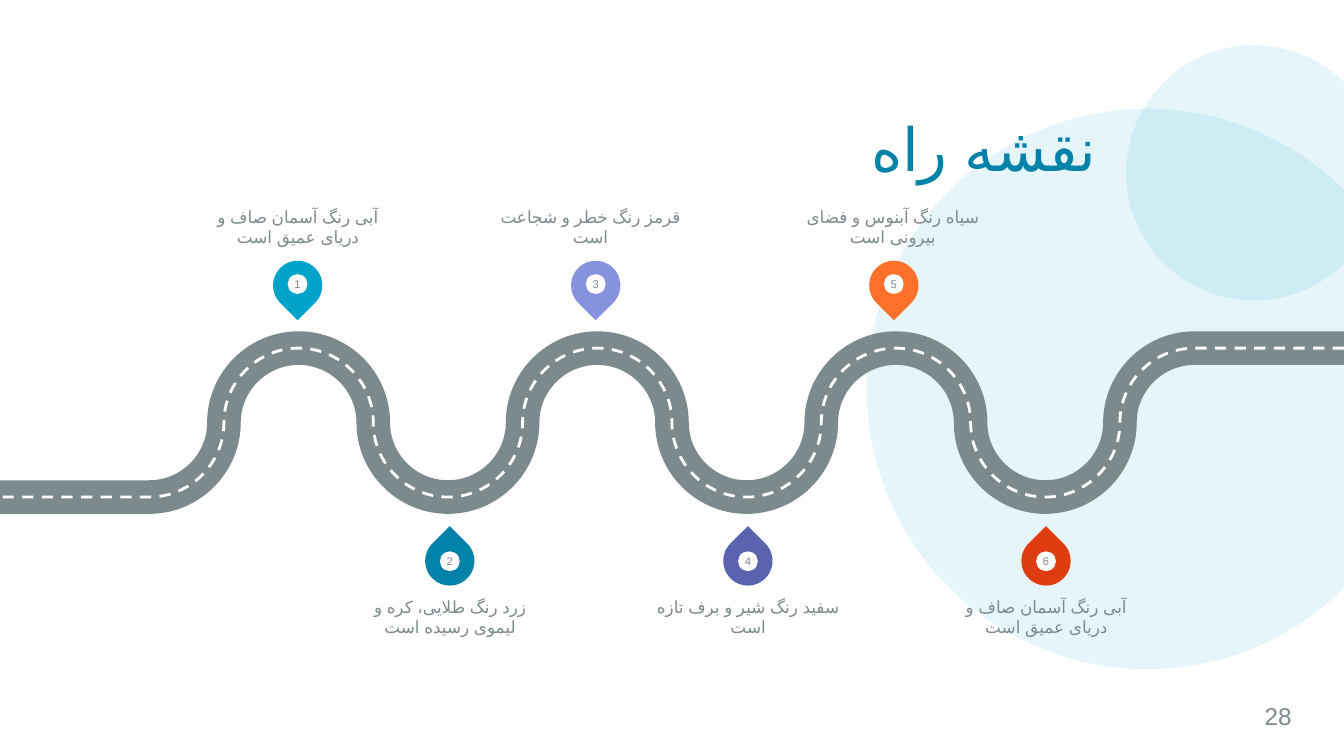
from pptx import Presentation
from pptx.dml.color import RGBColor
from pptx.enum.dml import MSO_LINE
from pptx.enum.shapes import MSO_SHAPE
from pptx.enum.text import MSO_ANCHOR, PP_ALIGN
from pptx.oxml.ns import qn
from pptx.util import Pt

CHORD, DROP, OVAL = MSO_SHAPE.CHORD, MSO_SHAPE.TEAR, MSO_SHAPE.OVAL
LEFT, MID, RIGHT = PP_ALIGN.LEFT, PP_ALIGN.CENTER, PP_ALIGN.RIGHT
TOP, CENTER, BASE = MSO_ANCHOR.TOP, MSO_ANCHOR.MIDDLE, MSO_ANCHOR.BOTTOM
DASH = MSO_LINE.DASH
GREY, WHITE, BLUE, TEAL = "7D8A8D", "FFFFFF", "00A4CA", "0082A9"
SANS, HEAD, SCRIPT = "Roboto", "Roboto Condensed", "Arial"
FRAME = dict(margin_left=0, margin_right=0, margin_top=0, margin_bottom=0, word_wrap=True)
STOPS = [
    ("آبی رنگ آسمان صاف و دریای عمیق است", BLUE, 0),
    ("زرد رنگ طلایی، کره و لیموی رسیده است", TEAL, 0),
    ("قرمز رنگ خطر و شجاعت است", "8792DF", -2.9),
    ("سفید رنگ شیر و برف تازه است", "5963AF", 0),
    ("سیاه رنگ آبنوس و فضای بیرونی است", "FF712A", -0.7),
    ("آبی رنگ آسمان صاف و دریای عمیق است", "DF3D11", 0),
]


def color(code):
    """Turn a hex string into a colour."""
    return RGBColor.from_string(code)


def style(target, values):
    """Set each attribute of the target from a dict."""
    for name, value in values.items():
        setattr(target, name, value)


def write(shape, text, size, font=SANS, code=GREY, align=MID, anchor=CENTER, space=1):
    """Put one right-to-left paragraph into a shape."""
    frame = shape.text_frame
    style(frame, FRAME | dict(vertical_anchor=anchor))
    para = frame.paragraphs[0]
    style(para, dict(alignment=align, line_spacing=space))
    para._p.get_or_add_pPr().set("rtl", "1")
    run = para.add_run()
    run.text = text
    style(run.font, dict(name=font, size=Pt(size)))
    run.font.color.rgb = color(code)
    props = run._r.get_or_add_rPr()
    props.set("lang", "fa-IR")
    props.append(props.makeelement(qn("a:cs"), {"typeface": SCRIPT}))


def label(shapes, box, text, size, **look):
    """Add a text box."""
    write(shapes.add_textbox(*map(Pt, box)), text, size, **look)


def solid(shapes, kind, box, code):
    """Add a filled shape with no outline."""
    shape = shapes.add_shape(kind, *map(Pt, box))
    shape.shadow.inherit = False
    shape.fill.solid()
    shape.fill.fore_color.rgb = color(code)
    shape.line.fill.background()
    return shape


def disc(shapes, box):
    """Add a pale circle cut off at the slide edge."""
    shape = solid(shapes, CHORD, box, BLUE)
    shape.adjustments[0], shape.adjustments[1] = 27, 189
    tint = shape.fill._xPr.find(".//" + qn("a:srgbClr"))
    tint.append(tint.makeelement(qn("a:alpha"), {"val": "10000"}))


def curve(lane):
    """Turn the inner legs of an outline into quarter arcs."""
    nodes = list(lane._element.find(".//" + qn("a:path")))
    spots = [tuple(int(node[0].get(axis)) for axis in "xy") for node in nodes]
    for index in range(2, len(nodes) - 1):
        (x, y), (end, base) = spots[index - 1:index + 1]
        near, far = (0.55, 0) if index % 2 == 0 else (0, 0.55)
        pulls = [(x + near * (end - x), y + far * (base - y)),
                 (end - far * (end - x), base - near * (base - y))]
        node = nodes[index]
        node.tag = qn("a:cubicBezTo")
        for place, pull in enumerate(pulls):
            values = {axis: str(round(value)) for axis, value in zip("xy", pull)}
            node.insert(place, node.makeelement(qn("a:pt"), values))


def road(shapes, box, bends=7):
    """Draw the winding road with its dashed centre line."""
    left, top, width, height = box
    step = 40
    levels = (0, height / 2, height, height / 2)
    start = left + width - 2 * step
    points = [(left + width, top)]
    points += [(start - step * turn, top + levels[turn % 4]) for turn in range(2 * bends + 1)]
    points.append((left, top + height))
    places = [(Pt(x), Pt(y)) for x, y in points]
    for code, weight, dash in ((GREY, 18, None), (WHITE, 1.5, DASH)):
        pen = shapes.build_freeform(*places[0])
        pen.add_line_segments(places[1:], close=False)
        lane = pen.convert_to_shape()
        curve(lane)
        lane.shadow.inherit = False
        lane.fill.background()
        lane.line.color.rgb = color(code)
        style(lane.line, dict(width=Pt(weight), dash_style=dash))


def stop(shapes, box, number, text, code, shift, above):
    """Place a numbered pin and its caption in a box."""
    left, top, width, height = box
    size, dot, tall = 26.4, 10.6, 41.8
    middle = left + width / 2
    pin = top + height - size if above else top
    group = shapes.add_group_shape().shapes
    drop = solid(group, DROP, (middle - size / 2, pin, size, size), code)
    drop.rotation = 135 if above else 315
    lift = 0.7 if above else -0.2
    spot = (middle - dot / 2, pin + (size - dot) / 2 - lift, dot, dot)
    write(solid(group, OVAL, spot, WHITE), str(number), 6)
    place = top if above else top + height - tall
    label(shapes, (left + shift, place, width, tall), text, 9, anchor=BASE if above else TOP)


def roadmap(shapes, box):
    """Lay out the road and the stops along it."""
    left, top, width, height = box
    road(shapes, (left, top + 95.8, width, 79.8))
    for index, (text, code, shift) in enumerate(STOPS):
        above = index % 2 == 0
        across = left + 108.7 + 79.85 * index + (0 if above else 1.7)
        tall = 75.4 if above else 74.2
        place = (across, top if above else top + height - tall, 101.5, tall)
        stop(shapes, place, index + 1, text, code, shift, above)


def main():
    """Build and save the slide."""
    deck = Presentation()
    style(deck, dict(slide_width=Pt(720), slide_height=Pt(405)))
    shapes = deck.slides.add_slide(deck.slide_layouts[6]).shapes
    disc(shapes, (464.4, 58.3, 300.2, 300.2))
    disc(shapes, (603.4, 24.2, 136.8, 136.8))
    label(shapes, (67.7, 51.8, 519.8, 59), "نقشه راه", 32,
          font=HEAD, code=TEAL, align=RIGHT, space=0.9)
    label(shapes, (677.5, 372.2, 27.4, 22.3), "28", 13, align=LEFT)
    roadmap(shapes, (0, 90.7, 720, 270.8))
    deck.save("out.pptx")


if __name__ == "__main__":
    main()
